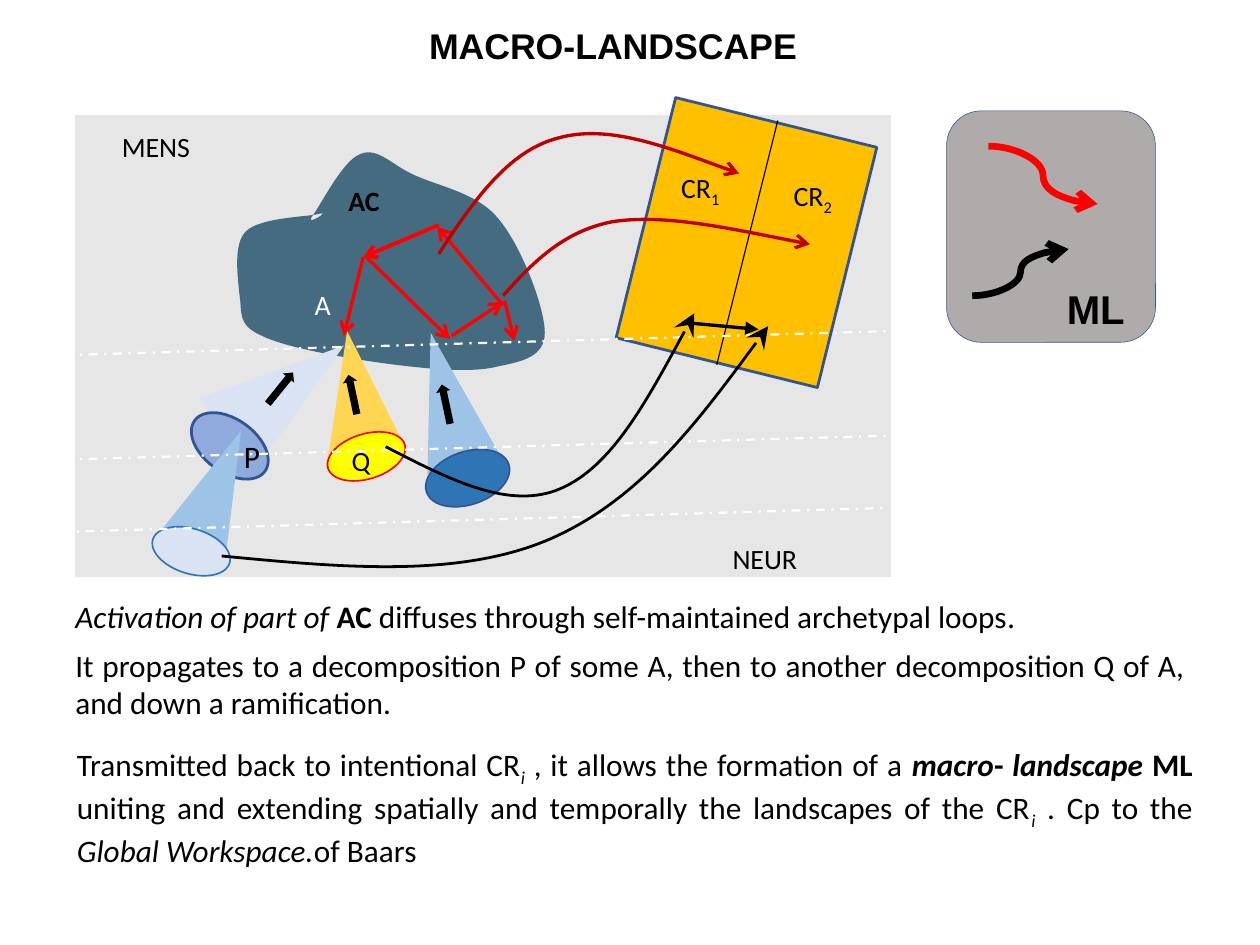
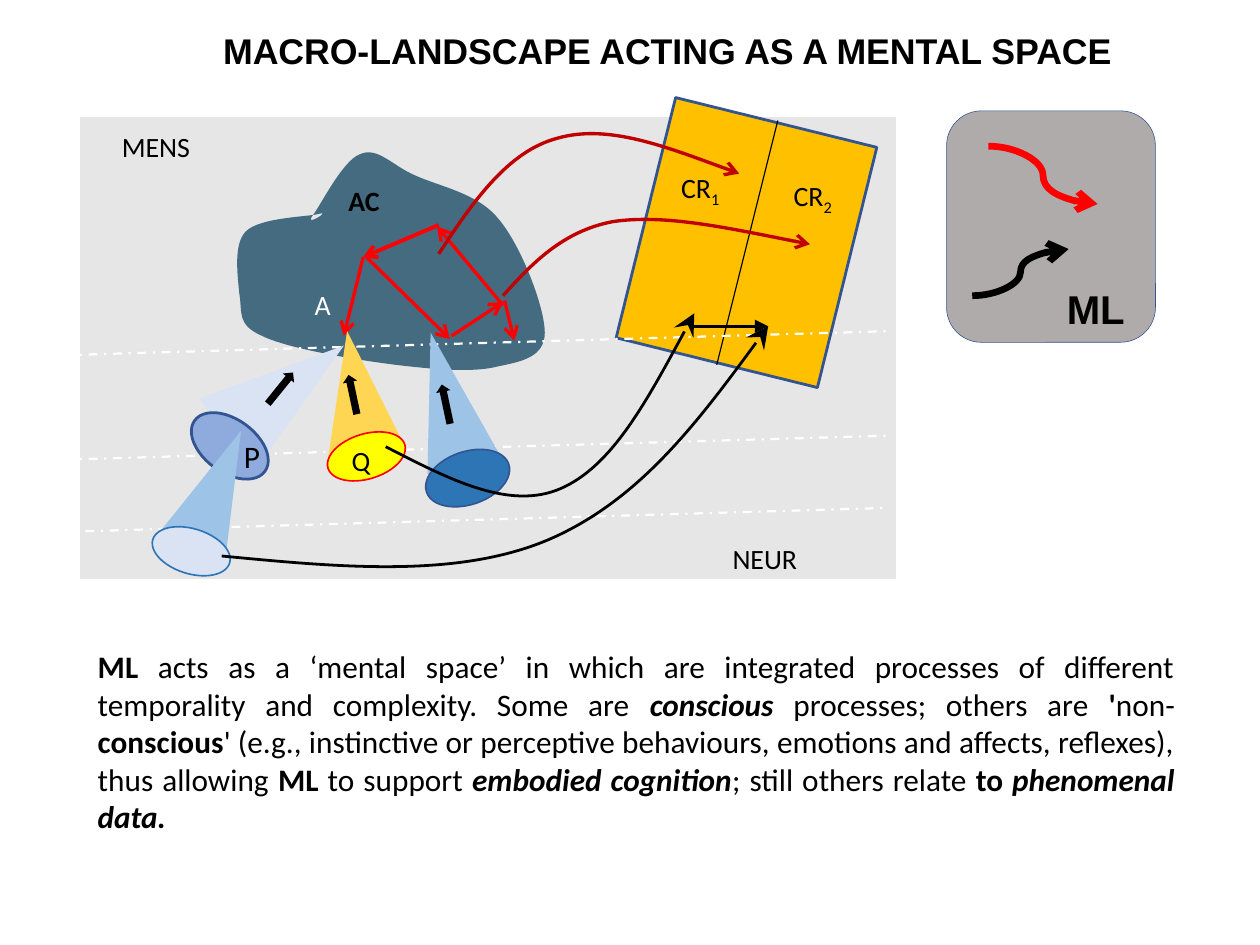
from lxml.etree import SubElement as Sub
from pptx import Presentation
from pptx.dml.color import RGBColor
from pptx.enum.dml import MSO_LINE
from pptx.enum.shapes import MSO_CONNECTOR as CON, MSO_SHAPE as SHP
from pptx.enum.text import MSO_AUTO_SIZE as FIT, PP_ALIGN as AL
from pptx.oxml.ns import qn
from pptx.util import Inches, Pt

BLACK, WHITE, RED, NAVY = "000000", "FFFFFF", "FF0000", "325491"
PALE, SKY, DARK = "DAE3F3", "9DC3E6", "C00000"


def hue(code):
    return RGBColor.from_string(code)


class Deck:
    """Holds the deck style and the slide being drawn."""

    def __init__(self):
        self.prs = Presentation()
        self.prs.slide_width = Inches(7.84)
        self.prs.slide_height = Inches(5.88)

    def page(self):
        self.items = self.prs.slides.add_slide(self.prs.slide_layouts[6]).shapes

    def pen(self, line, color, width, tip=None, size="med", dash=None):
        line.color.rgb = hue(color)
        line.width = Pt(width)
        if dash:
            line.dash_style = dash
        if tip:
            ln = line._get_or_add_ln()
            Sub(ln, qn("a:tailEnd"), type=tip, w=size, len=size)

    def paint(self, item, fill, pen):
        item.shadow.inherit = False
        if fill:
            item.fill.solid()
            item.fill.fore_color.rgb = hue(fill)
        else:
            item.fill.background()
        if pen:
            self.pen(item.line, *pen)
        else:
            item.line.fill.background()

    def shape(self, kind, box, fill, pen=None, turn=0):
        item = self.items.add_shape(kind, *map(Inches, box))
        item.rotation = turn
        self.paint(item, fill, pen)

    def line(self, start, end, *pen, kind=CON.STRAIGHT, **more):
        item = self.items.add_connector(kind, *map(Inches, start + end))
        self.pen(item.line, *pen, **more)
        Sub(item._element.spPr, qn("a:effectLst"))

    def free(self, pts, fill=None, pen=None, curve=False):
        pts = [(Inches(x), Inches(y)) for x, y in pts]
        form = self.items.build_freeform(*pts[0])
        form.add_line_segments(pts[1:], close=bool(fill))
        item = form.convert_to_shape()
        if curve:
            segs = list(item._element.iter(qn("a:lnTo")))
            for first, *rest in zip(segs[::3], segs[1::3], segs[2::3]):
                first.tag = qn("a:cubicBezTo")
                for seg in rest:
                    first.append(seg[0])
                    seg.getparent().remove(seg)
        self.paint(item, fill, pen)

    def text(self, box, runs, size=12.5, color=BLACK, face="Calibri",
             align=AL.LEFT, before=0, wrap=True):
        frame = self.items.add_textbox(*map(Inches, box)).text_frame
        frame.word_wrap = wrap
        frame.auto_size = FIT.SHAPE_TO_FIT_TEXT
        para = frame.paragraphs[0]
        para.alignment = align
        para.space_before = Pt(before)
        for words, marks in runs:
            run = para.add_run()
            run.text = words
            font = run.font
            font.name, font.size = face, Pt(size)
            font.bold, font.italic = "b" in marks, "i" in marks
            font.color.rgb = hue(color)
            if "s" in marks:
                run._r.get_or_add_rPr().set("baseline", "-25000")

    def title(self, box, words):
        self.text(box, [(words, "b")], 16, face="Arial", align=AL.CENTER)

    def body(self, box, runs, before=0):
        self.text(box, runs, 14, align=AL.JUSTIFY, before=before)


BLOB = [
    (1.94, 1.35), (1.99, 1.29), (2.13, 1), (2.24, 0.96),
    (2.35, 0.91), (2.44, 1.03), (2.58, 1.09),
    (2.73, 1.16), (2.97, 1.2), (3.1, 1.36),
    (3.24, 1.52), (3.39, 1.91), (3.39, 2.07),
    (3.39, 2.22), (3.25, 2.25), (3.1, 2.28),
    (2.95, 2.32), (2.71, 2.3), (2.46, 2.27),
    (2.22, 2.24), (1.79, 2.17), (1.63, 2.09),
    (1.47, 2.02), (1.51, 1.94), (1.49, 1.83),
    (1.48, 1.72), (1.45, 1.52), (1.53, 1.44),
    (1.62, 1.35), (1.93, 1.35), (1.99, 1.33),
    (2.06, 1.31), (1.9, 1.41), (1.94, 1.35),
]
LOOPS = [
    ((3.13, 1.9), (2.72, 1.41), 1.5), ((2.26, 1.6), (2.14, 2.09), 1.5),
    ((2.73, 1.4), (2.26, 1.6), 1.75), ((2.28, 1.6), (2.8, 2.11), 1.5),
    ((2.81, 2.09), (3.13, 1.88), 1.5), ((3.14, 1.87), (3.2, 2.12), 1.5),
]
RISES = [
    [(3.13, 1.84), (3.31, 1.64), (3.5, 1.44), (3.81, 1.38),
     (4.13, 1.33), (4.58, 1.43), (5.04, 1.52)],
    [(2.73, 1.58), (2.94, 1.26), (3.16, 0.94), (3.47, 0.86),
     (3.78, 0.77), (4.19, 0.93), (4.6, 1.08)],
]
BACKS = [
    [(2.4, 2.78), (2.79, 2.98), (3.17, 3.18), (3.49, 3.04),
     (3.81, 2.9), (4.06, 2.43), (4.32, 1.95)],
    [(1.38, 3.46), (2.11, 3.53), (2.84, 3.6), (3.41, 3.36),
     (3.97, 3.12), (4.38, 2.58), (4.78, 2.03)],
]
CONES = [
    ([(1.24, 2.48), (2.14, 2.15), (1.58, 2.94)], PALE,
     (1.16, 2.61, 0.54, 0.33), "8FAADC", (NAVY, 1.25), 35.8),
    ([(2.66, 2.95), (2.68, 2.07), (3.15, 2.9)], SKY,
     (2.64, 2.81, 0.54, 0.33), "2E75B6", (NAVY, 0.75), 341.2),
    ([(2.04, 2.86), (2.16, 2.06), (2.52, 2.78)], "FFD653",
     (2.03, 2.7, 0.5, 0.28), "FFFF00", (RED, 0.75), 342.9),
    ([(1.01, 3.29), (1.5, 2.68), (1.4, 3.5)], SKY,
     (0.94, 3.29, 0.5, 0.28), PALE, ("2E75B6", 0.75), 17.1),
]


def bands(deck):
    for x, y in (0.4, 2.21), (0.4, 2.86), (0.38, 3.31):
        deck.line((x, y), (x + 5.15, y - 0.15), WHITE, 1,
                  dash=MSO_LINE.DASH_DOT)


def cones(deck):
    for pts, fill, box, tint, pen, turn in CONES:
        deck.free(pts, fill)
        deck.shape(SHP.OVAL, box, tint, pen, turn)
    for x, y, turn in (1.7, 2.29, 39), (2.73, 2.39, 348), (2.15, 2.33, 348):
        deck.shape(SHP.UP_ARROW, (x, y, 0.09, 0.25), BLACK, turn=turn)
    deck.text((1.42, 2.67, 0.43, 0.34), [("P", "")], 14)
    deck.text((2.09, 2.71, 0.39, 0.31), [("Q", "")])


def panel(deck):
    deck.shape(SHP.ROUNDED_RECTANGLE, (5.89, 0.69, 1.3, 1.44), "AFABAB",
               (NAVY, 0.25))
    deck.line((6.15, 0.91), (6.83, 1.27), RED, 3, "arrow", kind=CON.CURVE)
    deck.line((6.05, 1.84), (6.65, 1.55), BLACK, 3, "arrow", kind=CON.CURVE)
    deck.text((6.54, 1.72, 0.57, 0.4), [("ML", "b")], 18, face="Arial",
              wrap=False)


def scene(deck, left, top, parts, start, end):
    deck.shape(SHP.RECTANGLE, (left, top, 5.09, 2.89), "E7E6E6", (WHITE, 1))
    deck.free(BLOB, "456B81", curve=True)
    deck.shape(SHP.RECTANGLE, (4, 0.74, 1.29, 1.54), "FFC000",
               (NAVY, 1.25), 13.9)
    deck.line((4.84, 0.75), (4.46, 2.27), BLACK, 0.5)
    deck.text((4.14, 1.01, 0.64, 0.31), [("CR", ""), ("1", "s")])
    deck.text((4.84, 1.06, 0.53, 0.31), [("CR", ""), ("2", "s")])
    deck.text((1.86, 1.74, 0.43, 0.31), [("A", "")], color=WHITE)
    deck.text((2.07, 1.09, 0.53, 0.31), [("AC", "b")])
    for tail, head, width in LOOPS:
        deck.line(tail, head, RED, width, "arrow")
    for pts in RISES:
        deck.free(pts, pen=(DARK, 1.5, "arrow"), curve=True)
    panel(deck)
    for part in parts:
        part(deck)
    deck.text((0.66, 0.76, 0.66, 0.31), [("MENS", "")])
    deck.text((4.46, 3.32, 0.66, 0.31), [("NEUR", "")])
    for pts in BACKS:
        deck.free(pts, pen=(BLACK, 1.25, "stealth", "lg"), curve=True)
    deck.line(start, end, BLACK, 1.5, "triangle")


def main():
    deck = Deck()

    deck.page()
    deck.title((0.41, 0.1, 6.81, 0.37), "MACRO-LANDSCAPE")
    scene(deck, 0.46, 0.71, (cones, bands), (4.29, 2.01), (4.72, 2.05))
    deck.body((0.37, 3.67, 7.05, 0.34), [
        ("Activation of part of ", "i"), ("AC ", "b"),
        ("diffuses through self-maintained archetypal loops", ""),
        (".", "i")])
    deck.body((0.37, 3.97, 7.11, 0.57), [
        ("It propagates to a decomposition P of some A, then to another "
         "decomposition Q of A, and down a ramification.", "")])
    deck.body((0.38, 4.59, 7.14, 0.81), [
        ("Transmitted back to intentional CR", ""), ("i", "is"),
        (" , it allows the formation of a ", ""), ("macro", "bi"),
        ("- ", "b"), ("landscape ", "bi"), ("ML ", "b"),
        ("uniting and extending spatially and temporally the landscapes "
         "of the CR", ""), ("i", "is"), (" . Cp to the ", ""),
        ("Global Workspace.", "i"), ("of Baars", "")])

    deck.page()
    deck.title((1.21, 0.13, 5.89, 0.37),
               "MACRO-LANDSCAPE ACTING AS A MENTAL SPACE")
    scene(deck, 0.49, 0.72, (bands, cones), (4.32, 2.03), (4.78, 2.03))
    deck.body((0.51, 3.98, 6.9, 1.28), [
        ("ML ", "b"),
        ("acts as a ‘mental space’ in which are integrated processes of "
         "different temporality and complexity. Some are ", ""),
        ("conscious", "bi"), (" processes; others are ", ""), ("'", "b"),
        ("non-", ""), ("conscious", "b"),
        ("' (e.g., instinctive or perceptive behaviours, emotions and "
         "affects, reflexes), thus allowing ", ""), ("ML", "b"),
        (" to support ", ""), ("embodied cognition", "bi"),
        ("; still others relate ", ""), ("to", "b"),
        (" phenomenal data.", "bi")], before=6)

    deck.prs.save("out.pptx")


if __name__ == "__main__":
    main()
